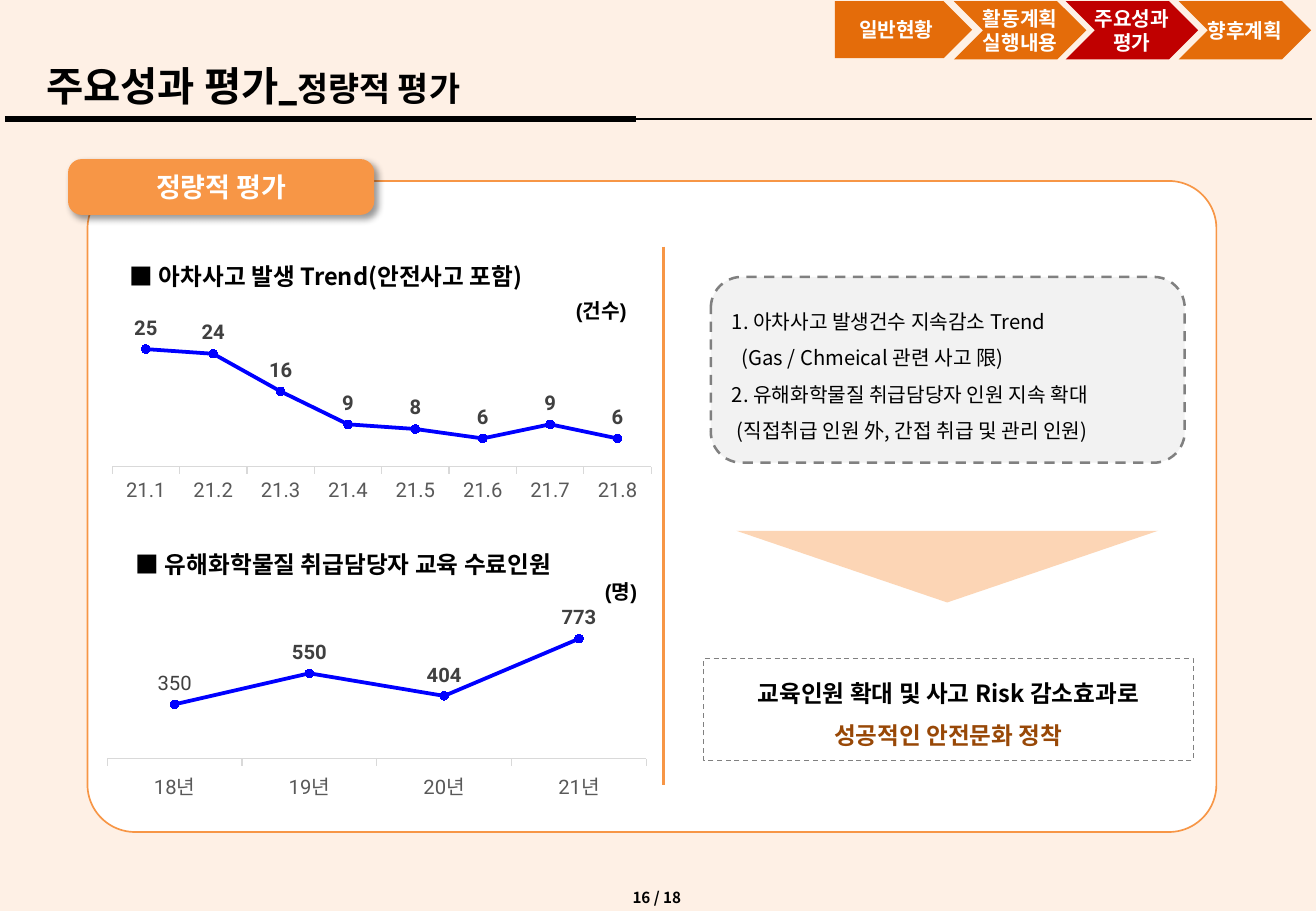
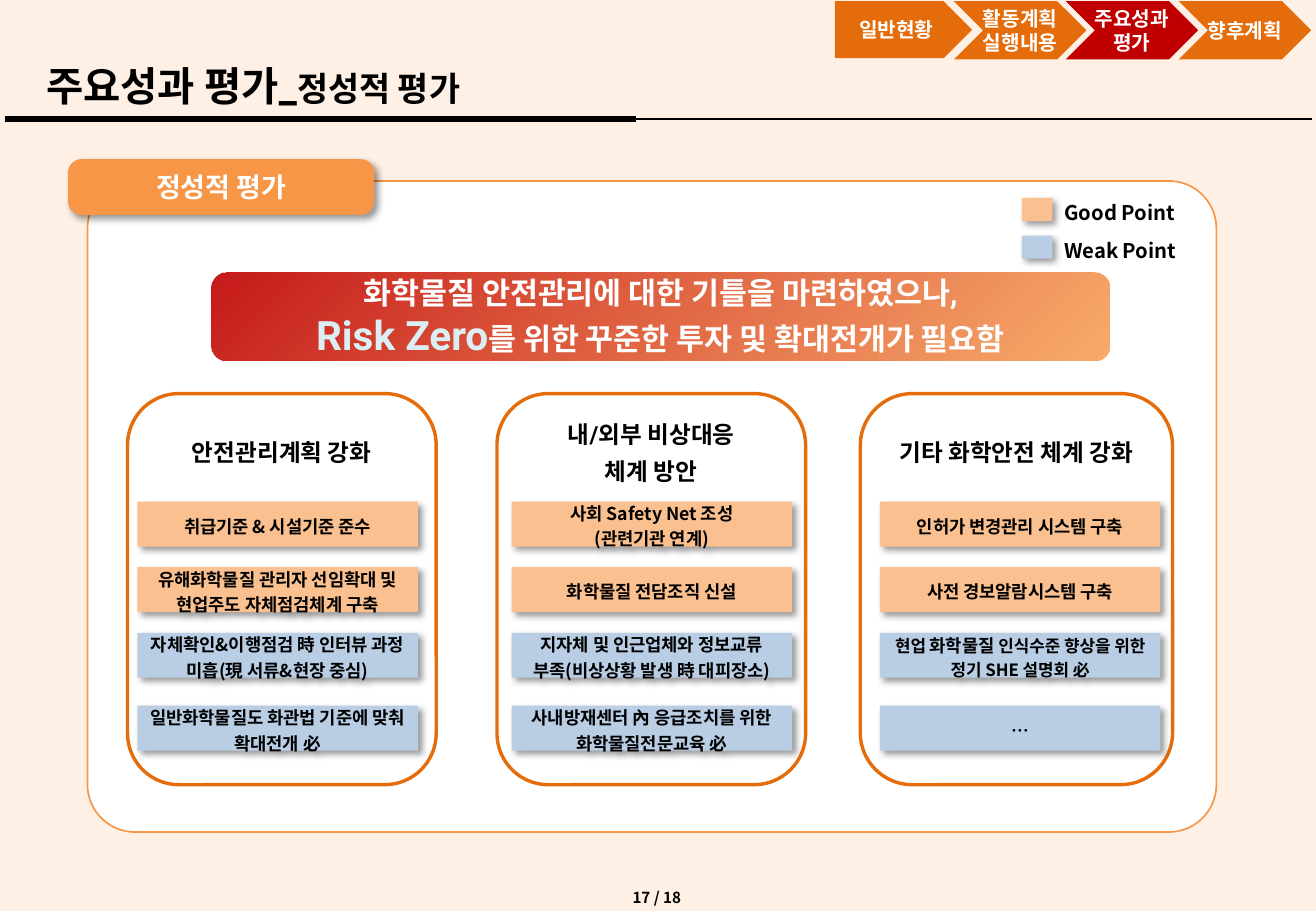
from pptx import Presentation
from pptx.chart.data import CategoryChartData as ChartData
from pptx.dml.color import RGBColor as RGB
from pptx.enum.chart import XL_CHART_TYPE as CT, XL_LABEL_POSITION as LP
from pptx.enum.chart import XL_MARKER_STYLE as MS, XL_TICK_MARK as TM
from pptx.enum.dml import MSO_LINE as DASH
from pptx.enum.shapes import MSO_CONNECTOR as CON, MSO_SHAPE as SH
from pptx.enum.text import MSO_ANCHOR as ANC, MSO_AUTO_SIZE as AUTO, PP_ALIGN as AL
from pptx.oxml import parse_xml
from pptx.oxml.ns import nsdecls, qn
from pptx.util import Inches, Pt

# Shared colours and fonts
CREAM, WHITE, BLACK = RGB(0xFE, 0xF0, 0xE5), RGB(255, 255, 255), RGB(0, 0, 0)
ORANGE, DEEP, RED = RGB(0xF7, 0x96, 0x46), RGB(0xE4, 0x6C, 0x0A), RGB(0xC0, 0, 0)
GOOD, WEAK, PEACH = RGB(0xFA, 0xC0, 0x90), RGB(0xB9, 0xCD, 0xE5), RGB(0xFC, 0xD5, 0xB5)
BROWN, ICE, BLUE = RGB(0x98, 0x48, 0x07), RGB(0xDB, 0xEE, 0xF4), RGB(0, 0, 255)
PALE, GRAY, RULE = RGB(0xF2, 0xF2, 0xF2), RGB(0x80, 0x80, 0x80), RGB(0xD9, 0xD9, 0xD9)
AXIS, LABEL = RGB(0x59, 0x59, 0x59), RGB(0x40, 0x40, 0x40)
NOTO, ROBOTO, ARIAL = "Noto Sans CJK KR", "Roboto", "Arial"

# Content; a paragraph is a string or a list of (text, format) runs
STEPS = [  # text, shape, place
    (["일반현황"], SH.PENTAGON, (6.87, 0.01, 1.13, 0.47)),
    (["활동계획", "실행내용"], SH.CHEVRON, (7.85, 0.01, 1.09, 0.48)),
    (["주요성과", "평가"], SH.CHEVRON, (8.77, 0.01, 1.09, 0.48)),
    (["향후계획"], SH.CHEVRON, (9.7, 0.01, 1.09, 0.48)),
]
ACTIVE = 2
TRENDS = [
    dict(head="■ 아차사고 발생 Trend(안전사고 포함)", hbox=(0.97, 1.99, 4.71, 0.45),
         unit="(건수)", ubox=(4.64, 2.41, 0.76, 0.3), at=(0.7, 2.44, 4.75, 1.73),
         top=30, plain=[], vals=[25, 24, 16, 9, 8, 6, 9, 6],
         cats=["21.1", "21.2", "21.3", "21.4", "21.5", "21.6", "21.7", "21.8"]),
    dict(head="■ 유해화학물질 취급담당자 교육 수료인원", hbox=(1.02, 4.36, 4.03, 0.45),
         unit="(명)", ubox=(4.88, 4.72, 0.72, 0.3), at=(0.66, 4.86, 4.75, 1.73),
         top=900, plain=[0], vals=[350, 550, 404, 773],
         cats=["18년", "19년", "20년", "21년"]),
]
PLOT = dict(x=0.047, y=0.139, w=0.934, h=0.672)
NOTES = [  # text, indent
    ("1. 아차사고 발생건수 지속감소 Trend", 0),
    ("(Gas / Chmeical 관련 사고 限)", 0.08),
    ("2. 유해화학물질 취급담당자 인원 지속 확대", 0),
    ("(직접취급 인원 外, 간접 취급 및 관리 인원)", 0.04),
]
RESULT = [[("교육인원 확대 및 사고 Risk 감소효과로 ", {}),
           ("성공적인 안전문화 정착", dict(color=BROWN))]]
BANNER = ["화학물질 안전관리에 대한 기틀을 마련하였으나,",
          [("Risk Zero", dict(size=24, color=ICE)),
           ("를 위한 꾸준한 투자 및 확대전개가 필요함", {})]]
SMALL = dict(size=10)
CARDS = [  # left, width, left of items, heading, items
    (1.05, 2.54, 1.13, ["안전관리계획 강화"], [
        ["취급기준 & 시설기준 준수"],
        ["유해화학물질 관리자 선임확대 및 현업주도 자체점검체계 구축"],
        ["자체확인&이행점검 時 인터뷰 과정 미흡(現 서류&현장 중심)"],
        ["일반화학물질도 화관법 기준에 맞춰 확대전개 必"]]),
    (4.09, 2.54, 4.21, ["내/외부 비상대응", "체계 방안"], [
        ["사회 Safety Net 조성", "(관련기관 연계)"],
        ["화학물질 전담조직 신설"],
        ["지자체 및 인근업체와 정보교류 부족(비상상황 발생 時 대피장소)"],
        ["사내방재센터 內 응급조치를 위한 화학물질전문교육 必"]]),
    (7.08, 2.57, 7.24, ["기타 화학안전 체계 강화"], [
        ["인허가 변경관리 시스템 구축"],
        ["사전 경보알람시스템 구축"],
        [[("현업 ", SMALL), ("화학물질", {}),
          (" 인식수준 향상을 위한 정기 SHE 설명회 必", SMALL)]],
        ["…"]]),
]
ROWS = [(4.13, GOOD), (4.67, GOOD), (5.21, WEAK), (5.81, WEAK)]
LEGEND = [("Good Point", GOOD), ("Weak Point", WEAK)]

SHADOW = (f'<a:effectLst {nsdecls("a")}><a:outerShdw blurRad="50800" dist="38100" '
          'dir="2700000" algn="tl" rotWithShape="0"><a:srgbClr val="000000">'
          '<a:alpha val="40000"/></a:srgbClr></a:outerShdw></a:effectLst>')
GLOW = (f'<a:gradFill {nsdecls("a")} rotWithShape="1"><a:gsLst>'
        f'<a:gs pos="0"><a:srgbClr val="{ORANGE}"><a:alpha val="80000"/></a:srgbClr></a:gs>'
        f'<a:gs pos="100000"><a:srgbClr val="{RED}"><a:alpha val="90000"/></a:srgbClr></a:gs>'
        '</a:gsLst><a:path path="circle"><a:fillToRect l="100000" t="100000"/></a:path>'
        '</a:gradFill>')


def box(vals):
    return [Inches(v) for v in vals]


def style(font, size, name, color, bold):
    font.size, font.name, font.bold = Pt(size), name, bold
    font.color.rgb = color


def write(shape, paras, size=12, name=NOTO, color=BLACK, bold=True, align=AL.LEFT,
          space=1.0, anchor=ANC.TOP, wrap=True, pad=(0.1, 0.05, 0.1, 0.05)):
    frame = shape.text_frame
    frame.auto_size, frame.word_wrap, frame.vertical_anchor = AUTO.NONE, wrap, anchor
    (frame.margin_left, frame.margin_top,
     frame.margin_right, frame.margin_bottom) = box(pad)
    base = dict(size=size, name=name, color=color, bold=bold)
    for i, runs in enumerate(paras):
        para = frame.add_paragraph() if i else frame.paragraphs[0]
        para.alignment, para.line_spacing = align, space
        for text, diff in [(runs, {})] if isinstance(runs, str) else runs:
            run = para.add_run()
            run.text = text
            style(run.font, **{**base, **diff})
            latin = run._r.get_or_add_rPr().find(qn("a:latin"))
            latin.addnext(parse_xml(f'<a:ea {nsdecls("a")} typeface="{NOTO}"/>'))
    return shape


def draw(slide, kind, at, fill=None, line=None, width=1, dash=None, adj=None, cast=False):
    shape = slide.shapes.add_shape(kind, *box(at))
    if adj is not None:
        shape.adjustments[0] = adj
    if fill is None:
        shape.fill.background()
    else:
        shape.fill.solid()
        shape.fill.fore_color.rgb = fill
    if line is None:
        shape.line.fill.background()
    else:
        shape.line.color.rgb, shape.line.width = line, Pt(width)
        if dash:
            shape.line.dash_style = dash
    shape.shadow.inherit = False
    if cast:
        props = shape.element.spPr
        props.replace(props.find(qn("a:effectLst")), parse_xml(SHADOW))
    return shape


def label(slide, at, paras, **fmt):
    return write(slide.shapes.add_textbox(*box(at)), paras, **fmt)


def rule(slide, ends, color, width):
    line = slide.shapes.add_connector(CON.STRAIGHT, *box(ends))
    line.line.color.rgb, line.line.width = color, Pt(width)
    line.element.spPr.append(parse_xml(f'<a:effectLst {nsdecls("a")}/>'))


def start(deck, topic, page):
    """Add a slide with the parts that all slides share."""
    slide = deck.slides.add_slide(deck.slide_layouts[5])
    title = slide.shapes.title
    title.left, title.top, title.width, title.height = box((0.28, 0.39, 9.72, 0.54))
    write(title, [[("주요성과 평가_", {}), (topic, dict(size=20))]],
          size=24, name=ROBOTO, space=1.2, anchor=ANC.MIDDLE)
    rule(slide, (5.04, 0.98, 10.8, 0.98), BLACK, 0.75)
    rule(slide, (0.04, 0.98, 5.23, 0.98), BLACK, 3)
    # Progress arrows
    for i, (text, kind, at) in enumerate(STEPS):
        step = draw(slide, kind, at, RED if i == ACTIVE else DEEP)
        write(step, text, color=WHITE, align=AL.CENTER, anchor=ANC.MIDDLE,
              wrap=False, pad=(0, 0, 0, 0))
    # Panel with its tab, and the page number
    draw(slide, SH.ROUNDED_RECTANGLE, (0.72, 1.49, 9.29, 5.36), WHITE, ORANGE, adj=0.073)
    tab = draw(slide, SH.ROUNDED_RECTANGLE, (0.56, 1.31, 2.52, 0.46), ORANGE,
               adj=0.247, cast=True)
    write(tab, [topic], size=16, name=ROBOTO, color=WHITE, align=AL.CENTER,
          anchor=ANC.MIDDLE)
    label(slide, (4.85, 7.23, 1.11, 0.28), [f"{page} / 18"], size=9,
          align=AL.CENTER, anchor=ANC.BOTTOM)
    return slide


def plot(slide, at, cats, vals, top, plain):
    data = ChartData()
    data.categories = cats
    data.add_series("Series 1", vals)
    chart = slide.shapes.add_chart(CT.LINE_MARKERS, *box(at), data).chart
    chart.has_legend = chart.has_title = False
    style(chart.font, 10, ROBOTO, BLACK, False)
    # Axes
    scale, axis = chart.value_axis, chart.category_axis
    scale.minimum_scale, scale.maximum_scale = 0, top
    scale.has_major_gridlines = scale.visible = False
    axis.major_tick_mark = TM.OUTSIDE
    axis.format.line.color.rgb, axis.format.line.width = RULE, Pt(0.75)
    style(axis.tick_labels.font, 12, ROBOTO, AXIS, False)
    # Line, markers and labels
    chart.plots[0].vary_by_categories = False
    line = chart.plots[0].series[0]
    line.smooth = False
    line.format.line.color.rgb, line.format.line.width = BLUE, Pt(2.25)
    line.marker.style, line.marker.size = MS.CIRCLE, 5
    line.marker.format.fill.solid()
    line.marker.format.fill.fore_color.rgb = BLUE
    line.marker.format.line.color.rgb = BLUE
    tags = line.data_labels
    tags.show_value, tags.position = True, LP.ABOVE
    style(tags.font, 12, ROBOTO, LABEL, True)
    for i in plain:
        tag = line.points[i].data_label
        style(tag.font, 12, ROBOTO, LABEL, False)
        tag.position = LP.ABOVE
    # Fixed inner plot area
    area = chart.plots[0]._element.getparent()
    for old in area.findall(qn("c:layout")):
        area.remove(old)
    sizes = "".join(f'<c:{k} val="{v}"/>' for k, v in PLOT.items())
    area.insert(0, parse_xml(
        f'<c:layout {nsdecls("c")}><c:manualLayout><c:layoutTarget val="inner"/>'
        f'<c:xMode val="edge"/><c:yMode val="edge"/>{sizes}</c:manualLayout></c:layout>'))


def trends(deck):
    slide = start(deck, "정량적 평가", 16)
    for t in TRENDS:
        plot(slide, t["at"], t["cats"], t["vals"], t["top"], t["plain"])
        label(slide, t["hbox"], [t["head"]], size=14, space=1.5)
        label(slide, t["ubox"], [t["unit"]], name=ARIAL)
    rule(slide, (5.46, 2.03, 5.46, 6.46), ORANGE, 2.25)
    # Findings, arrow and result
    notes = draw(slide, SH.ROUNDED_RECTANGLE, (5.85, 2.28, 3.9, 1.53), PALE, GRAY,
                 1.5, DASH.DASH)
    write(notes, [text for text, _ in NOTES], bold=False, align=AL.JUSTIFY, space=1.5,
          anchor=ANC.MIDDLE)
    for para, (_, indent) in zip(notes.text_frame.paragraphs, NOTES):
        para._p.get_or_add_pPr().set("marL", str(Inches(indent)))
    draw(slide, SH.ISOSCELES_TRIANGLE, (6.06, 4.37, 3.47, 0.59), PEACH).rotation = 180
    result = draw(slide, SH.RECTANGLE, (5.79, 5.42, 4.03, 0.84), None, GRAY, 0.75, DASH.DASH)
    write(result, RESULT, size=14, align=AL.CENTER, space=1.5)


def points(deck):
    slide = start(deck, "정성적 평가", 17)
    banner = draw(slide, SH.ROUNDED_RECTANGLE, (1.74, 2.24, 7.39, 0.73), RED)
    props = banner.element.spPr
    props.replace(props.find(qn("a:solidFill")), parse_xml(GLOW))
    write(banner, BANNER, size=18, name=ROBOTO, color=WHITE, align=AL.CENTER,
          anchor=ANC.MIDDLE)
    # Cards with their items
    for left, width, inner, head, items in CARDS:
        card = draw(slide, SH.ROUNDED_RECTANGLE, (left, 3.24, width, 3.22), WHITE, DEEP, 2)
        write(card, head, size=14, name=ROBOTO, align=AL.CENTER, space=1.3,
              anchor=ANC.MIDDLE, pad=(0.1, 0, 0.1, 2.32))
        for text, (top, color) in zip(items, ROWS):
            item = draw(slide, SH.RECTANGLE, (inner, top, 2.31, 0.37), color, cast=True)
            write(item, text, size=10.5, align=AL.CENTER, space=1.2, anchor=ANC.MIDDLE)
    # Legend
    for i, (text, color) in enumerate(LEGEND):
        top = 1.6 + 0.31 * i
        draw(slide, SH.RECTANGLE, (8.41, top + 0.03, 0.25, 0.19), color, cast=True)
        label(slide, (8.66, top, 1.26, 0.3), [text])


def main():
    deck = Presentation()
    deck.slide_width, deck.slide_height = Inches(10.83), Inches(7.5)
    back = deck.slide_master.background.fill
    back.solid()
    back.fore_color.rgb = CREAM
    trends(deck)
    points(deck)
    deck.save("out.pptx")


if __name__ == "__main__":
    main()
